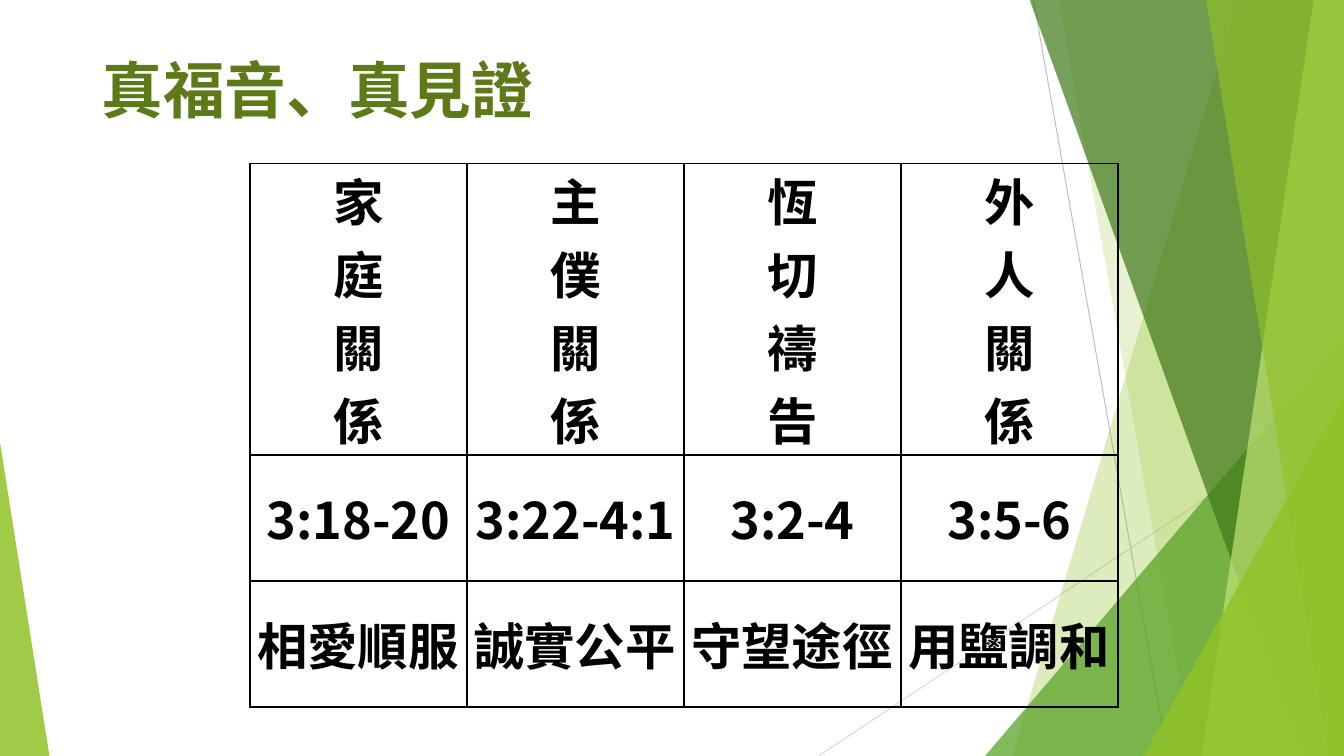
from lxml.etree import SubElement
from pptx import Presentation
from pptx.dml.color import RGBColor
from pptx.enum.shapes import MSO_CONNECTOR, MSO_SHAPE
from pptx.enum.text import MSO_ANCHOR, PP_ALIGN
from pptx.oxml.ns import qn
from pptx.util import Inches, Pt

BLACK = RGBColor(0x00, 0x00, 0x00)
OLIVE = RGBColor(0x5C, 0x7A, 0x18)
LIME = RGBColor(0x90, 0xC2, 0x26)
PALE = RGBColor(0xC0, 0xE4, 0x74)
GREEN = RGBColor(0x54, 0xA0, 0x21)
DARK = RGBColor(0x3F, 0x78, 0x19)
GRAY = RGBColor(0xBF, 0xBF, 0xBF)
SILVER = RGBColor(0xD9, 0xD9, 0xD9)

WIDE, HIGH, TOP = 13.33, 7.5, -0.01
HEADS = ["家庭關係", "主僕關係", "恆切禱告", "外人關係"]
VERSES = ["3:18-20", "3:22-4:1", "3:2-4", "3:5-6"]
POINTS = ["相愛順服", "誠實公平", "守望途徑", "用鹽調和"]


class Deck:
    font, body, head = "Arial", 36, 44

    def __init__(self):
        self.file = Presentation()
        self.file.slide_width = Inches(WIDE)
        self.file.slide_height = Inches(HIGH)
        self.slide = self.file.slides.add_slide(self.file.slide_layouts[6])
        self.shapes = self.slide.shapes

    def line(self, start, end, color):
        ends = [Inches(v) for v in (*start, *end)]
        line = self.shapes.add_connector(MSO_CONNECTOR.STRAIGHT, *ends)
        line.line.color.rgb = color
        line.line.width = Pt(0.75)
        SubElement(line._element.spPr, qn("a:effectLst"))

    def paint(self, shape, color, alpha):
        """Fill without outline; alpha is the opacity in percent."""
        shape.shadow.inherit = False
        shape.line.fill.background()
        shape.fill.solid()
        shape.fill.fore_color.rgb = color
        tint = shape._element.spPr.find(qn("a:solidFill"))[0]
        SubElement(tint, qn("a:alpha"), val=str(alpha * 1000))

    def band(self, top, foot, color, alpha):
        """Area from a slanted left edge to the slide's right edge."""
        spots = [(WIDE, TOP), (WIDE, HIGH), (foot, HIGH)]
        form = self.shapes.build_freeform(Inches(top), Inches(TOP))
        form.add_line_segments([(Inches(x), Inches(y)) for x, y in spots])
        self.paint(form.convert_to_shape(), color, alpha)

    def wedge(self, left, top, width, peak, color, alpha):
        """Triangle standing on the slide's bottom edge."""
        box = [Inches(v) for v in (left, top, width, HIGH - top)]
        shape = self.shapes.add_shape(MSO_SHAPE.ISOSCELES_TRIANGLE, *box)
        shape.adjustments[0] = peak
        self.paint(shape, color, alpha)

    def style(self, para, size, color, name):
        font = para.font
        font.size, font.bold, font.name = Pt(size), True, name
        font.color.rgb = color

    def title(self, text, left, top, width, height):
        box = [Inches(v) for v in (left, top, width, height)]
        frame = self.shapes.add_textbox(*box).text_frame
        frame.word_wrap = True
        para = frame.paragraphs[0]
        para.text = text
        para.line_spacing = 0.9
        self.style(para, self.head, OLIVE, "Karla")

    def border(self, cell):
        props = cell._tc.get_or_add_tcPr()
        for spot, side in enumerate(("lnL", "lnR", "lnT", "lnB")):
            edge = props.makeelement(qn("a:" + side), {"w": str(Pt(1))})
            fill = SubElement(edge, qn("a:solidFill"))
            SubElement(fill, qn("a:srgbClr"), val=str(BLACK))
            props.insert(spot, edge)

    def cell(self, cell, text, align, name):
        cell.fill.background()
        cell.vertical_anchor = MSO_ANCHOR.MIDDLE
        cell.margin_left = cell.margin_right = Inches(0.07)
        cell.margin_top = cell.margin_bottom = 0
        cell.text = text
        for para in cell.text_frame.paragraphs:
            para.alignment = align
            self.style(para, self.body, BLACK, name)
        self.border(cell)

    def table(self, rows, left, top, width, heights):
        """Each row is (texts, alignment, font name)."""
        count = len(rows[0][0])
        box = [Inches(v) for v in (left, top, width, sum(heights))]
        table = self.shapes.add_table(len(rows), count, *box).table
        table.first_row = table.horz_banding = False
        for r, (texts, align, name) in enumerate(rows):
            table.rows[r].height = Inches(heights[r])
            for c, text in enumerate(texts):
                self.cell(table.cell(r, c), text, align, name)


def main():
    deck = Deck()
    deck.line((10.25, 0), (11.58, HIGH), GRAY)
    deck.line((WIDE, 4.03), (8.12, HIGH), SILVER)
    deck.band(12.28, 10.04, LIME, 30)
    deck.band(10.5, 11.83, LIME, 20)
    deck.wedge(9.77, 3.33, 3.56, 1, GREEN, 72)
    deck.band(10.21, 12.91, DARK, 70)
    deck.band(13.03, 11.92, PALE, 70)
    deck.band(11.96, 13.18, LIME, 65)
    deck.wedge(11.34, 3.93, 1.99, 1, LIME, 80)
    deck.wedge(0, 4.39, 0.49, 0, LIME, 85)

    rows = [
        (["\n".join(head) for head in HEADS], PP_ALIGN.CENTER, deck.font),
        (VERSES, PP_ALIGN.CENTER, "Noto Sans CJK SC"),
        (POINTS, PP_ALIGN.LEFT, deck.font),
    ]
    deck.table(rows, 2.48, 1.62, 8.61, [2.83, 1.25, 1.25])
    deck.title("真福音、真見證", 0.91, 0.55, 9.4, 1.44)
    deck.file.save("out.pptx")


if __name__ == "__main__":
    main()
